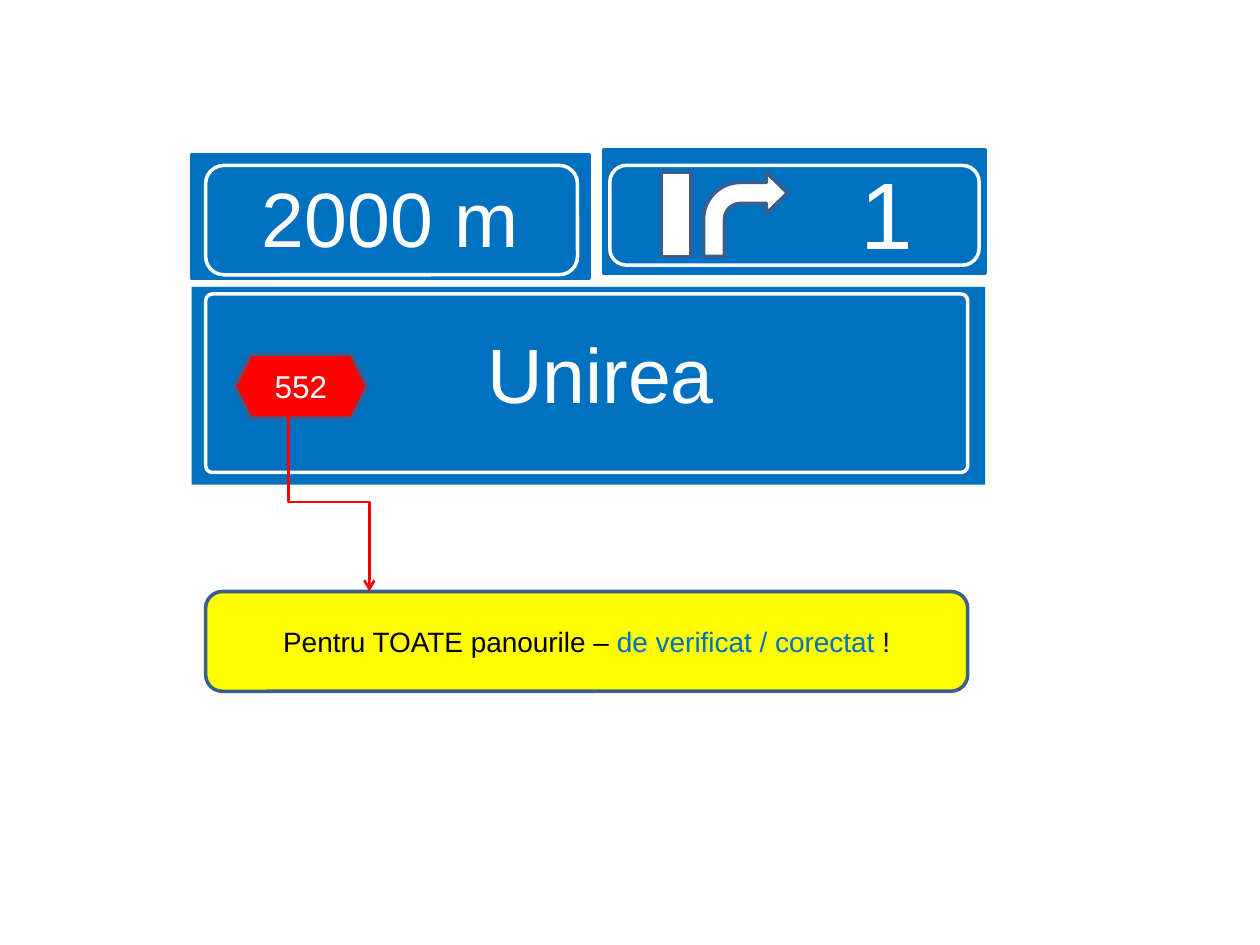
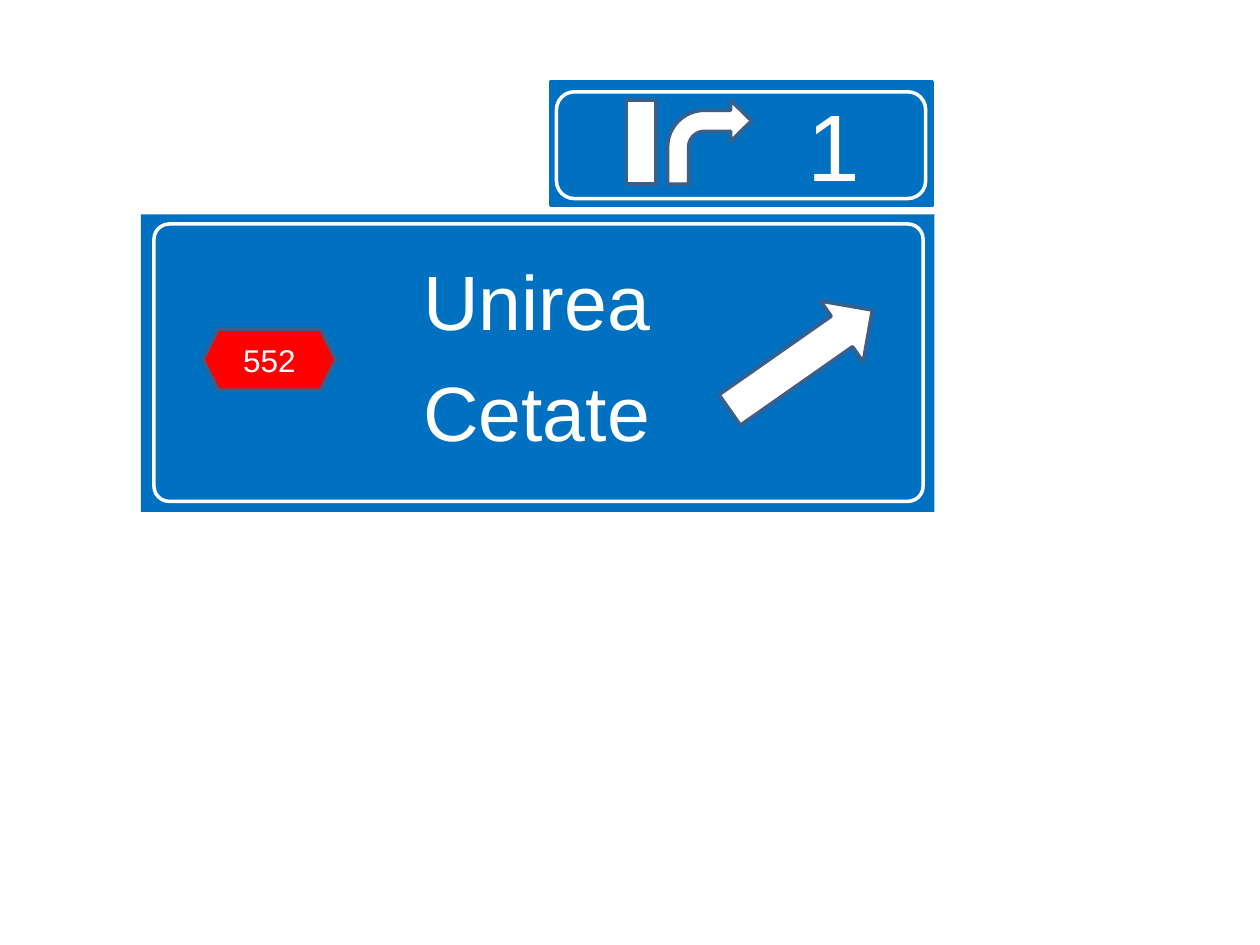
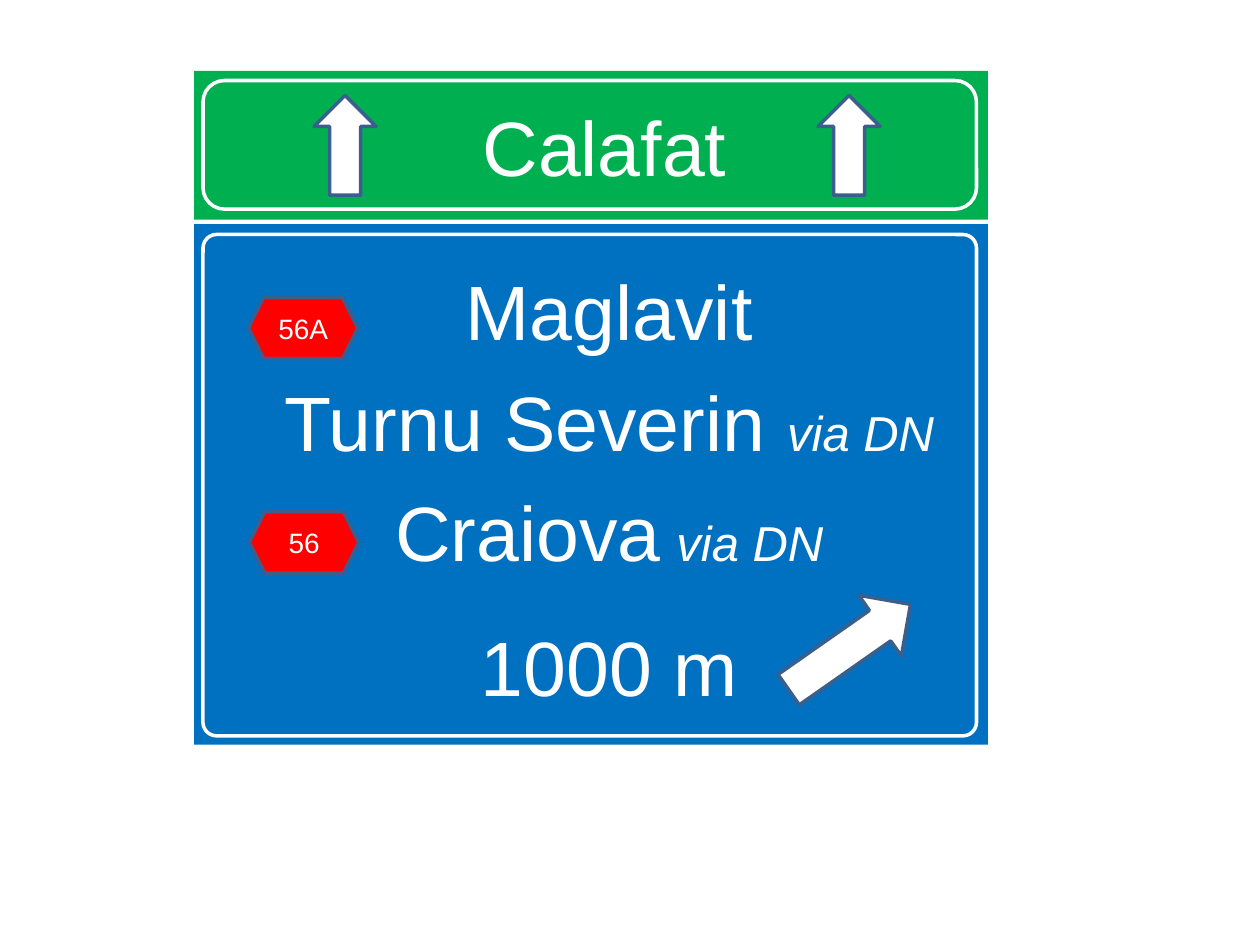
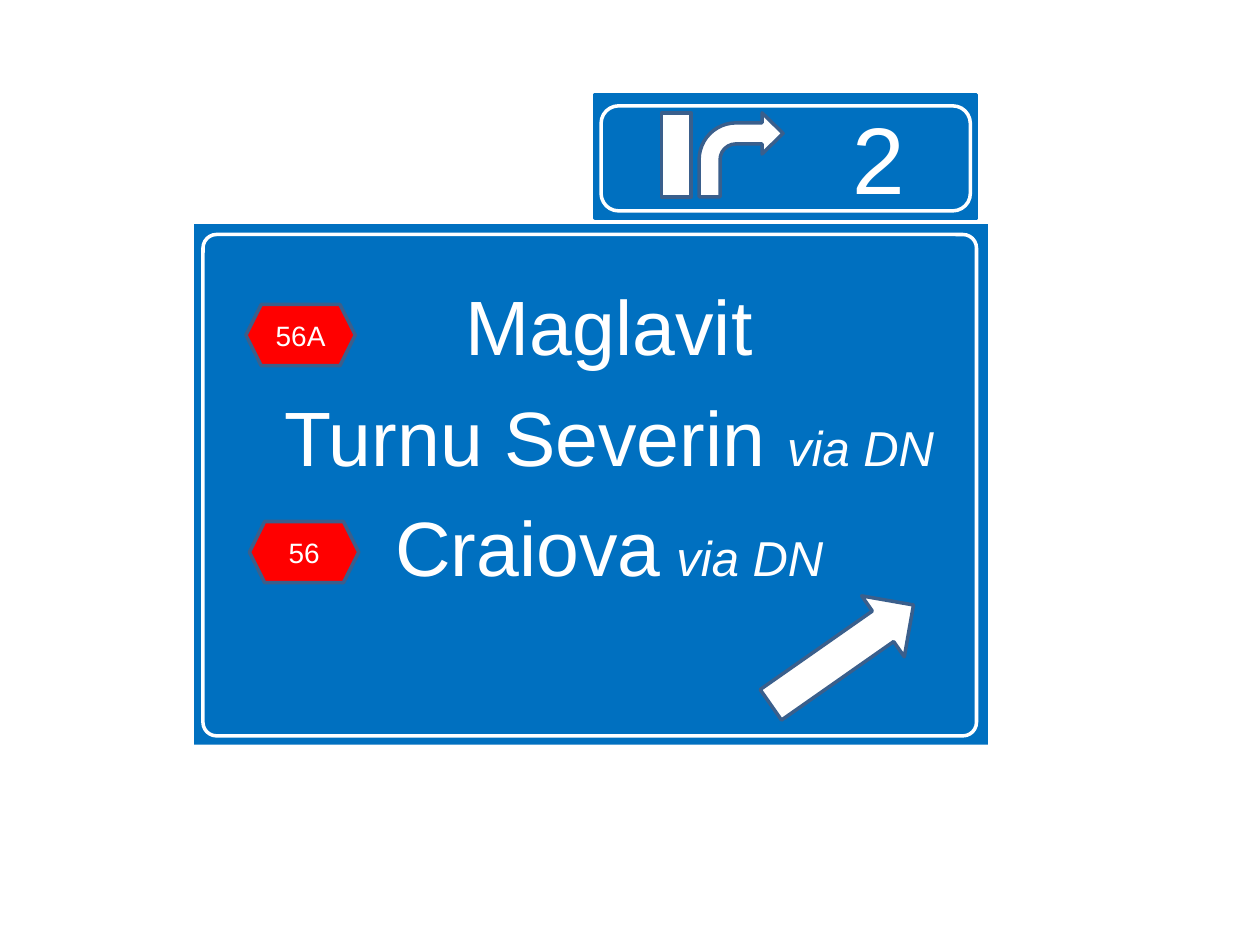
from dataclasses import dataclass

from lxml import etree
from pptx import Presentation
from pptx.dml.color import RGBColor
from pptx.enum import shapes, text
from pptx.oxml import ns
from pptx.util import Pt

SHAPE = shapes.MSO_SHAPE


@dataclass(frozen=True)
class Theme:
    font: str = "Arial"
    white: str = "FFFFFF"
    black: str = "000000"
    blue: str = "0070C0"
    green: str = "00B050"
    red: str = "FF0000"
    yellow: str = "FFFF00"
    outline: str = "3A5F8C"
    exit_size: int = 54
    place_size: int = 44
    gap_size: int = 32
    via_size: int = 28
    road_size: int = 18
    small_size: int = 16
    line_width: float = 2
    place_spacing: float = 10.5


THEME = Theme()


def rgb(value):
    return RGBColor.from_string(value)


def write(shape, content, size, color=THEME.white, anchor=text.MSO_ANCHOR.MIDDLE,
          insets=(7.2, 3.6, 7.2, 3.6), spacing=()):
    """Fill a shape with paragraphs, each a string or a list of (text, format) runs."""
    frame = shape.text_frame
    frame.word_wrap = True
    frame.vertical_anchor = anchor
    (frame.margin_left, frame.margin_top,
     frame.margin_right, frame.margin_bottom) = map(Pt, insets)
    paragraphs = [content] if isinstance(content, str) else content
    for index, runs in enumerate(paragraphs):
        paragraph = frame.add_paragraph() if index else frame.paragraphs[0]
        paragraph.alignment = text.PP_ALIGN.CENTER
        if spacing:
            paragraph.space_before = Pt(spacing[index])
        for words, style in [(runs, {})] if isinstance(runs, str) else runs:
            run = paragraph.add_run()
            run.text = words
            run.font.name = THEME.font
            run.font.size = Pt(style.get("size", size))
            run.font.italic = style.get("italic", False)
            run.font.color.rgb = rgb(style.get("color", color))


class SignDeck:
    def __init__(self, theme):
        self.theme = theme
        self.presentation = Presentation()
        self.presentation.slide_width = Pt(720)
        self.presentation.slide_height = Pt(540)
        self.slide = None

    def new_slide(self):
        self.slide = self.presentation.slides.add_slide(self.presentation.slide_layouts[6])

    def shape(self, kind, left, top, width, height, fill=None, line=None,
              adjustments=(), rotation=0):
        shape = self.slide.shapes.add_shape(kind, *map(Pt, (left, top, width, height)))
        shape.shadow.inherit = False
        shape.rotation = rotation
        for index, value in enumerate(adjustments):
            shape.adjustments[index] = value
        if fill:
            shape.fill.solid()
            shape.fill.fore_color.rgb = rgb(fill)
        else:
            shape.fill.background()
        if line:
            shape.line.color.rgb = rgb(line)
            shape.line.width = Pt(self.theme.line_width)
        else:
            shape.line.fill.background()
        return shape

    def panel(self, left, top, width, height, fill=THEME.blue):
        return self.shape(SHAPE.RECTANGLE, left, top, width, height, fill)

    def border(self, left, top, width, height, corner=0.167):
        self.shape(SHAPE.ROUNDED_RECTANGLE, left, top, width, height,
                   line=self.theme.white, adjustments=[corner])

    def plate(self, left, top, width):
        return self.shape(SHAPE.ROUNDED_RECTANGLE, left, top, width, 70.5,
                          self.theme.blue, self.theme.blue, [0])

    def white_symbol(self, kind, left, top, width, height, **options):
        self.shape(kind, left, top, width, height, self.theme.white,
                   self.theme.outline, **options)

    def exit_plate(self, number, left, top, bar_left, arrow_left, symbol_top,
                   border_top, border_height):
        write(self.plate(left, top, 218), number, self.theme.exit_size,
              insets=(113, 3.6, 7.2, 3.6))
        self.white_symbol(SHAPE.RECTANGLE, bar_left, symbol_top, 17, 48)
        self.white_symbol(SHAPE.BENT_ARROW, arrow_left, symbol_top, 48, 48,
                          adjustments=[0.25, 0.245, 0.25, 0.438])
        self.border(left + 3.5, border_top, 211, border_height)

    def road(self, number, left, top, width, height, size):
        badge = self.shape(SHAPE.HEXAGON, left, top, width, height,
                           self.theme.red, self.theme.outline)
        write(badge, number, size)

    def exit_arrow(self, left, top, width):
        self.white_symbol(SHAPE.RIGHT_ARROW, left, top, width, 42.5, rotation=325)

    def places(self, panel, content, left=7.2, top=22.5, last_spacing=None):
        """List destinations from the top of a panel."""
        spacing = [self.theme.place_spacing] * len(content)
        if last_spacing:
            spacing[-1] = last_spacing
        write(panel, content, self.theme.place_size, anchor=text.MSO_ANCHOR.TOP,
              insets=(left, top, 7.2, 17), spacing=spacing)

    def vertical_elbow(self, start_x, start_y, end_x, end_y):
        """Draw an arrow that leaves downwards, steps sideways and ends downwards."""
        middle_x, middle_y = (start_x + end_x) / 2, (start_y + end_y) / 2
        half_length, half_step = (end_y - start_y) / 2, (end_x - start_x) / 2
        connector = self.slide.shapes.add_connector(
            shapes.MSO_CONNECTOR.ELBOW,
            Pt(middle_x + half_length), Pt(middle_y - half_step),
            Pt(middle_x - half_length), Pt(middle_y + half_step))
        connector.line.color.rgb = rgb(self.theme.red)
        connector.line.width = Pt(1.5)
        properties = connector._element.spPr
        properties.find(ns.qn("a:xfrm")).set("rot", str(270 * 60000))
        line = properties.find(ns.qn("a:ln"))
        for end, kind in (("a:headEnd", "oval"), ("a:tailEnd", "arrow")):
            etree.SubElement(line, ns.qn(end)).set("type", kind)
        etree.SubElement(properties, ns.qn("a:effectLst"))


def distance_sign(deck):
    theme = deck.theme
    deck.new_slide()
    deck.places(deck.panel(109.5, 164, 453.5, 113), ["Unirea"], left=21)
    deck.border(117.5, 168, 435.5, 102, corner=0.037)
    deck.exit_plate("1", 345, 85.5, bar_left=378, arrow_left=402, symbol_top=98.5,
                    border_top=94.5, border_height=57)
    write(deck.plate(109.5, 88.5, 227), "2000 m", theme.place_size)
    deck.border(117.5, 94.5, 212.5, 62.5)
    deck.road("552", 134, 202.5, 76, 36.5, theme.road_size)
    note = deck.shape(SHAPE.ROUNDED_RECTANGLE, 117.5, 338, 435.5, 57,
                      theme.yellow, theme.outline)
    write(note, [[("Pentru TOATE panourile – ", {}),
                  ("de verificat / corectat ", {"color": theme.blue}),
                  ("!", {})]], theme.small_size, color=theme.black)
    deck.vertical_elbow(165, 236, 211, 338)


def exit_sign(deck):
    deck.new_slide()
    deck.places(deck.panel(80.5, 122.5, 453.5, 170), ["Unirea", "Cetate"], left=6)
    deck.exit_arrow(408, 184.5, 99.5)
    deck.border(88, 128, 439.5, 158.5, corner=0.055)
    deck.road("552", 116, 188, 76, 35, deck.theme.road_size)
    deck.exit_plate("1", 314.5, 47, bar_left=358, arrow_left=381.5, symbol_top=57.3,
                    border_top=52.5, border_height=61)


def destinations_panel(deck, roads, arrow, extra=(), **options):
    """Draw the large panel shared by the two Craiova signs."""
    theme = deck.theme
    via = ("via DN", {"size": theme.via_size, "italic": True})
    gap = (" ", {"size": theme.gap_size, "italic": True})
    content = ["Maglavit", [("Turnu Severin ", {}), via],
               [("Craiova", {}), gap, via], *extra]
    deck.places(deck.panel(111, 128, 453.5, 297.5), content, left=28, **options)
    deck.exit_arrow(*arrow)
    for number, left, top in roads:
        deck.road(number, left, top, 62.5, 35, theme.small_size)
    deck.border(116, 134, 442, 286.5, corner=0.027)


def calafat_sign(deck):
    theme = deck.theme
    deck.new_slide()
    write(deck.panel(111, 40.5, 453.5, 85, theme.green), "Calafat", theme.place_size,
          insets=(22.5, 3.6, 7.2, 3.6))
    destinations_panel(deck, [("56A", 142, 170), ("56", 142.5, 292.5)],
                       (443, 348.5, 85), extra=["1000 m"], last_spacing=24)
    for left in (179.5, 467.5):
        deck.white_symbol(SHAPE.UP_ARROW, left, 54.5, 35.5, 57)
    deck.border(116, 46, 442, 73.5)


def second_exit_sign(deck):
    deck.new_slide()
    destinations_panel(deck, [("56A", 140.5, 174), ("56", 142.5, 298)],
                       (431.5, 353, 99.5), top=31)
    deck.exit_plate("2", 340, 54, bar_left=378, arrow_left=399.5, symbol_top=64.5,
                    border_top=60.5, border_height=60)


def main():
    deck = SignDeck(THEME)
    for build in (distance_sign, exit_sign, calafat_sign, second_exit_sign):
        build(deck)
    deck.presentation.save("out.pptx")


if __name__ == "__main__":
    main()
